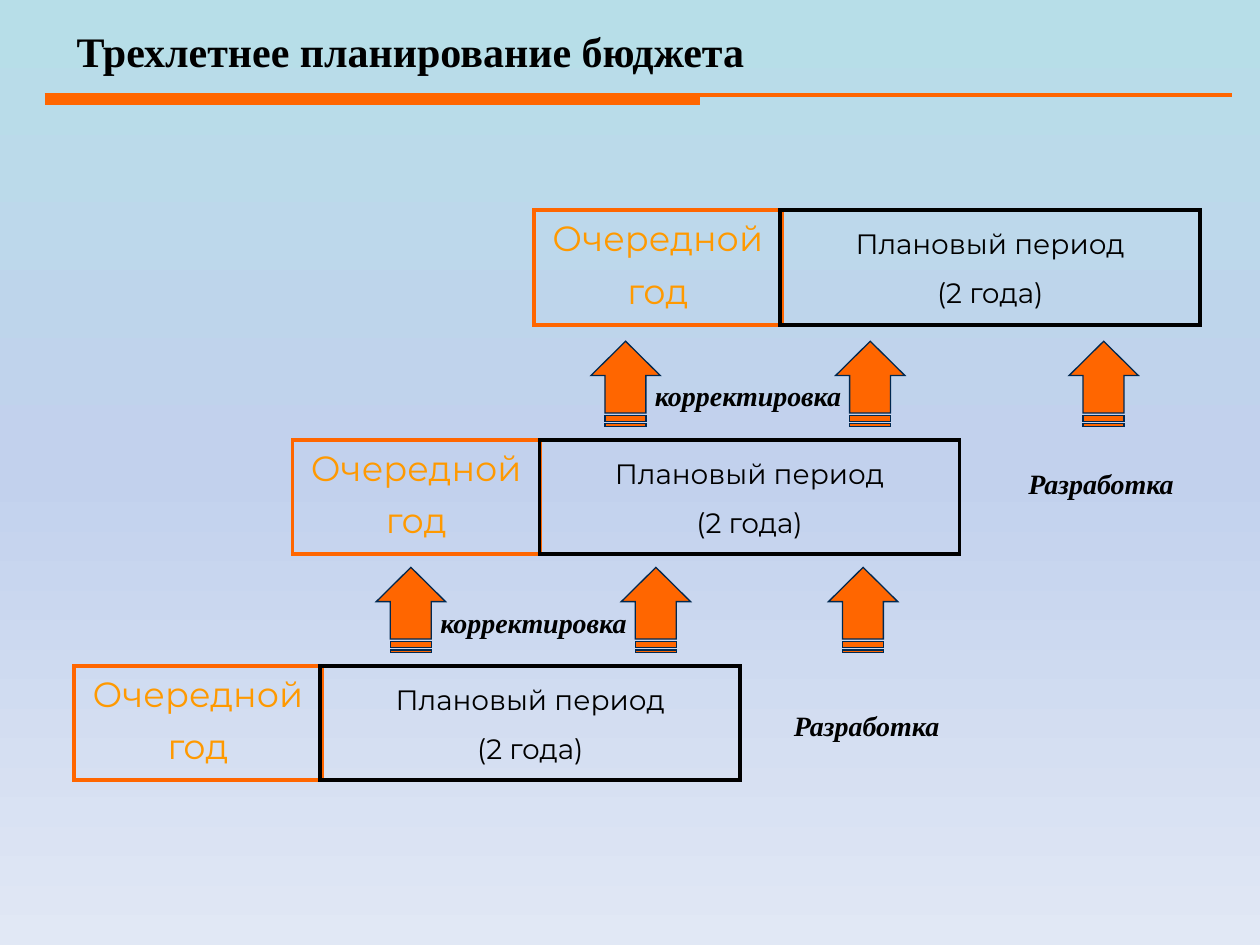
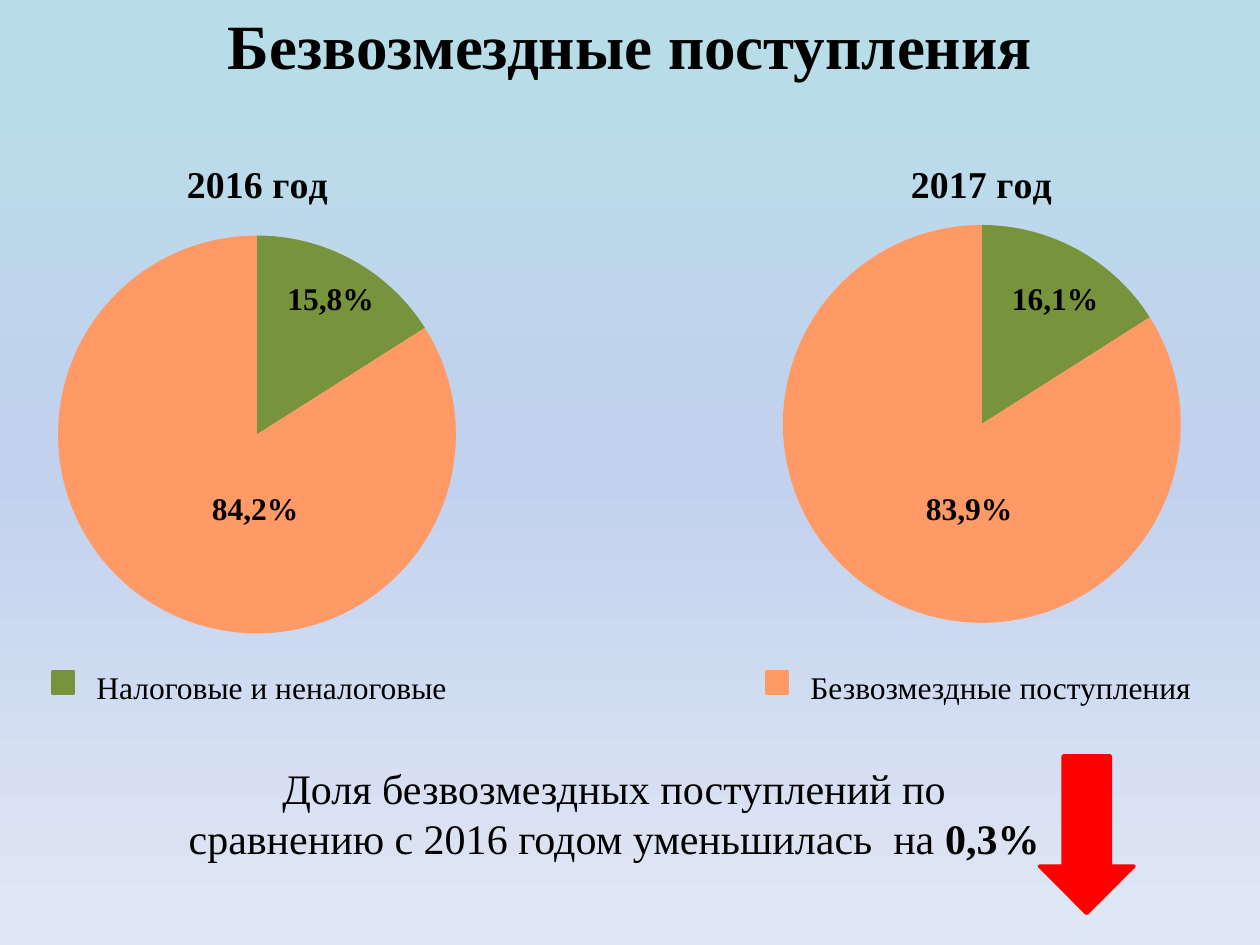
"""Build two budget slides: three-year planning and gratuitous receipts."""
from copy import deepcopy
from dataclasses import dataclass, field

from lxml import etree
from pptx import Presentation
from pptx.chart.data import CategoryChartData
from pptx.dml.color import RGBColor
from pptx.enum.chart import XL_CHART_TYPE
from pptx.enum.shapes import MSO_CONNECTOR, MSO_SHAPE
from pptx.enum.text import MSO_ANCHOR, PP_ALIGN
from pptx.oxml.ns import qn
from pptx.util import Pt

RECT, DOWN_ARROW = MSO_SHAPE.RECTANGLE, MSO_SHAPE.DOWN_ARROW
STRAIGHT, PIE = MSO_CONNECTOR.STRAIGHT, XL_CHART_TYPE.PIE
LEFT, CENTER = PP_ALIGN.LEFT, PP_ALIGN.CENTER
TOP, MIDDLE = MSO_ANCHOR.TOP, MSO_ANCHOR.MIDDLE

BLACK = RGBColor(0x00, 0x00, 0x00)
ORANGE = RGBColor(0xFF, 0x66, 0x00)
AMBER = RGBColor(0xFF, 0x99, 0x00)
NAVY = RGBColor(0x00, 0x28, 0x50)
GREEN = RGBColor(0x77, 0x93, 0x3C)
SALMON = RGBColor(0xFF, 0x99, 0x66)
RED = RGBColor(0xFF, 0x00, 0x00)
SKY = ((0, RGBColor(0xB7, 0xDE, 0xE8)), (0.5, RGBColor(0xC2, 0xD1, 0xED)),
       (1, RGBColor(0xE1, 0xE8, 0xF5)))

SERIF, SANS = "Times New Roman", "Montserrat"
PLAIN = {"name": SERIF, "size": Pt(18)}
BOLD = PLAIN | {"bold": True}
NOTE = {"name": SERIF, "size": Pt(16), "bold": True, "italic": True}
TITLE = BOLD | {"size": Pt(24)}
BIG_TITLE = BOLD | {"size": Pt(36)}
SUMMARY = PLAIN | {"size": Pt(24)}
CHART_TITLE = BOLD | {"size": Pt(21.6)}
NEXT_YEAR = {"name": SANS, "size": Pt(20)}
PLAN_PERIOD = {"name": SANS, "size": Pt(16)}

BOX_H, YEAR_W, PLAN_W = 65.5, 141.5, 240
ARROW_PARTS = (
    ((0, 19.6), (8, 19.6), (8, 41), (31.4, 41), (31.4, 19.6), (39.6, 19.6), (19.8, 0)),
    ((8, 45.7), (31.4, 45.7), (31.4, 42.4), (8, 42.4)),
    ((8, 48.6), (31.4, 48.6), (31.4, 47.2), (8, 47.2)),
)
PIE_SIZE = 227.4


@dataclass(frozen=True)
class Label:
    """A text box: place in points, text, font and alignment."""
    left: float
    top: float
    width: float
    height: float
    text: str
    font: dict = field(default_factory=lambda: BOLD)
    align: PP_ALIGN = CENTER
    anchor: MSO_ANCHOR = TOP
    tail: str = ""


@dataclass(frozen=True)
class Budget:
    """A budget cycle: left edges of its two boxes and their top."""
    year_left: float
    plan_left: float
    top: float


@dataclass(frozen=True)
class ArrowRow:
    """A row of upward arrows that share one top."""
    top: float
    lefts: tuple


@dataclass(frozen=True)
class Pie:
    """A pie chart: its frame, the corner of its circle and its shares."""
    title: str
    left: float
    width: float
    height: float
    circle_left: float
    circle_top: float
    shares: tuple = (16, 84)
    top: float = 77.8


@dataclass(frozen=True)
class Key:
    """A legend entry: colour, text and left edges of marker and text."""
    color: RGBColor
    text: str
    marker_left: float
    text_left: float


BUDGETS = (Budget(42.4, 183, 380.5), Budget(167.2, 308.3, 251.3),
           Budget(305.2, 445.8, 120))
ARROW_ROWS = (ArrowRow(324.2, (215, 355, 473.4)),
              ArrowRow(195, (337.7, 477.5, 610.9)))
PLAN_LABELS = (
    Label(36.7, 15.1, 648, 28.1, "Трехлетнее планирование бюджета", TITLE, LEFT, MIDDLE),
)
NOTES = (
    Label(241.2, 341.5, 127.4, 27.4, "корректировка", NOTE),
    Label(363.8, 212.1, 127.4, 27.4, "корректировка", NOTE),
    Label(569.8, 262.1, 118.8, 27.4, "Разработка", NOTE),
    Label(439.4, 400.3, 111.6, 27.4, "Разработка", NOTE),
)
PIES = (
    Pie("2016 год", 12.2, 270, 293.8, 33.2, 134.6),
    Pie("2017 год", 401.8, 318.2, 288, 447.4, 128.6),
)
KEYS = (Key(GREEN, "Налоговые и неналоговые", 30, 48),
        Key(SALMON, "Безвозмездные поступления", 438, 456))
RECEIPT_LABELS = (
    Label(0, 0, 720, 51, "Безвозмездные поступления", BIG_TITLE),
    Label(96, 432, 509.8, 65.5,
          "Доля безвозмездных поступлений по сравнению с 2016 годом уменьшилась  на ",
          SUMMARY, tail="0,3%"),
    Label(114, 275.8, 77.8, 28.8, "84,2%", align=LEFT),
    Label(522, 275.8, 77.8, 28.8, "83,9%", align=LEFT),
    Label(150, 156.2, 77.8, 28.8, "15,8%"),
    Label(564, 156.2, 77.8, 28.8, "16,1%"),
)


def set_all(target, values: dict) -> None:
    """Set every attribute named in values."""
    for name, value in values.items():
        setattr(target, name, value)


def set_font(font, values: dict, color: RGBColor = BLACK) -> None:
    """Apply font values and a colour."""
    set_all(font, values)
    font.color.rgb = color


def add_run(p, text: str, font: dict, color: RGBColor = BLACK) -> None:
    """Append a formatted run to a paragraph."""
    r = p.add_run()
    r.text = text
    set_font(r.font, font, color)


def spaced(font: dict) -> dict:
    """Return centred paragraph values with half a font size above."""
    return {"alignment": CENTER, "line_spacing": Pt(20),
            "space_before": Pt(font["size"].pt / 2)}


def add_slide(prs):
    """Add a blank slide with the shared sky gradient."""
    s = prs.slides.add_slide(prs.slide_layouts[6])
    fill = s.background.fill
    fill.gradient()
    fill.gradient_angle = 270
    stops = s.element.xpath(".//a:gsLst")[0]
    stops.append(deepcopy(stops[0]))
    for stop, (position, color) in zip(fill.gradient_stops, SKY):
        stop.position = position
        stop.color.rgb = color
    return s


def add_label(s, label: Label, paragraph: dict | None = None) -> None:
    """Draw a text box."""
    sp = s.shapes.add_textbox(Pt(label.left), Pt(label.top), Pt(label.width), Pt(label.height))
    tf = sp.text_frame
    set_all(tf, {"word_wrap": True, "vertical_anchor": label.anchor})
    p = tf.paragraphs[0]
    set_all(p, paragraph or {"alignment": label.align})
    add_run(p, label.text, label.font)
    if label.tail:
        add_run(p, label.tail, label.font | {"bold": True})


def style_shape(sp, fill: RGBColor | None, line: RGBColor, width: float,
                sharp: bool = False) -> None:
    """Give a shape flat fill and line, with sharp corners if asked."""
    sp.shadow.inherit = False
    if fill is None:
        sp.fill.background()
    else:
        sp.fill.solid()
        sp.fill.fore_color.rgb = fill
    sp.line.color.rgb = line
    sp.line.width = Pt(width)
    if sharp:
        ln = sp._element.spPr.find(qn("a:ln"))
        etree.SubElement(ln, qn("a:miter")).set("lim", "800000")


def add_box(s, left: float, top: float, width: float, lines: tuple, font: dict,
            border: RGBColor, color: RGBColor) -> None:
    """Draw an outlined box with centred lines of text."""
    sp = s.shapes.add_shape(RECT, Pt(left), Pt(top), Pt(width), Pt(BOX_H))
    style_shape(sp, None, border, 2.25, sharp=True)
    tf = sp.text_frame
    set_all(tf, {"word_wrap": False, "vertical_anchor": MIDDLE, "margin_left": 0,
                 "margin_right": 0, "margin_top": 0, "margin_bottom": 0})
    for i, line in enumerate(lines):
        p = tf.add_paragraph() if i else tf.paragraphs[0]
        set_all(p, spaced(font))
        add_run(p, line, font, color)


def add_arrow(s, left: float, top: float) -> None:
    """Draw an upward arrow with two bars under it."""
    parts = [[(Pt(x), Pt(y)) for x, y in part] for part in ARROW_PARTS]
    builder = s.shapes.build_freeform(*parts[0][0])
    for i, part in enumerate(parts):
        if i:
            builder.move_to(*part[0])
        builder.add_line_segments(part[1:], close=True)
    sp = builder.convert_to_shape(Pt(left), Pt(top))
    style_shape(sp, ORANGE, NAVY, 0.75, sharp=True)


def add_rule(s, left: float, right: float, y: float, width: float) -> None:
    """Draw a horizontal orange line."""
    line = s.shapes.add_connector(STRAIGHT, Pt(left), Pt(y), Pt(right), Pt(y))
    line.line.color.rgb = ORANGE
    line.line.width = Pt(width)
    etree.SubElement(line._element.spPr, qn("a:effectLst"))


def add_pie(s, pie: Pie) -> None:
    """Draw a pie chart with its circle at a fixed place."""
    data = CategoryChartData()
    data.categories = ["1", "2"]
    data.add_series("Series 1", pie.shares)
    chart = s.shapes.add_chart(PIE, Pt(pie.left), Pt(pie.top), Pt(pie.width),
                               Pt(pie.height), data).chart
    set_font(chart.font, PLAIN)
    chart.has_legend = False
    tf = chart.chart_title.text_frame
    add_run(tf.paragraphs[0], pie.title, CHART_TITLE)
    plot = chart.plots[0]
    plot.vary_by_categories = True
    for i, color in enumerate((GREEN, SALMON)):
        fmt = plot.series[0].points[i].format
        fmt.fill.solid()
        fmt.fill.fore_color.rgb = color
        fmt.line.fill.background()
    area = chart.element.xpath(".//c:plotArea")[0]
    for old in area.findall(qn("c:layout")):
        area.remove(old)
    layout = etree.Element(qn("c:layout"))
    area.insert(0, layout)
    manual = etree.SubElement(layout, qn("c:manualLayout"))
    values = {"layoutTarget": "inner", "xMode": "edge", "yMode": "edge",
              "x": (pie.circle_left - pie.left) / pie.width,
              "y": (pie.circle_top - pie.top) / pie.height,
              "w": PIE_SIZE / pie.width, "h": PIE_SIZE / pie.height}
    for name, value in values.items():
        etree.SubElement(manual, qn(f"c:{name}")).set("val", str(value))


def build_planning(prs) -> None:
    """Build the three-year planning slide."""
    s = add_slide(prs)
    add_rule(s, 25.9, 400.3, 56.9, 6)
    add_rule(s, 25.5, 703.8, 54.5, 2.25)
    for label in PLAN_LABELS:
        add_label(s, label)
    for budget in BUDGETS:
        add_box(s, budget.year_left, budget.top, YEAR_W, ("Очередной", "год"),
                NEXT_YEAR, ORANGE, AMBER)
        add_box(s, budget.plan_left, budget.top, PLAN_W,
                ("Плановый период", "(2 года)"), PLAN_PERIOD, BLACK, BLACK)
    for row in ARROW_ROWS:
        for left in row.lefts:
            add_arrow(s, left, row.top)
    for note in NOTES:
        add_label(s, note, spaced(NOTE))


def build_receipts(prs) -> None:
    """Build the slide that compares the receipts of two years."""
    s = add_slide(prs)
    for pie in PIES:
        add_pie(s, pie)
    for key in KEYS:
        sp = s.shapes.add_shape(RECT, Pt(key.marker_left), Pt(384), Pt(12), Pt(12))
        style_shape(sp, key.color, key.color, 2)
        add_label(s, Label(key.text_left, 378, 246.2, 28.8, key.text, PLAIN, LEFT))
    sp = s.shapes.add_shape(DOWN_ARROW, Pt(594), Pt(432), Pt(54), Pt(90))
    style_shape(sp, RED, RED, 2)
    for label in RECEIPT_LABELS:
        add_label(s, label)


def main() -> None:
    """Build and save the presentation."""
    prs = Presentation()
    set_all(prs, {"slide_width": Pt(720), "slide_height": Pt(540)})
    build_planning(prs)
    build_receipts(prs)
    prs.save("out.pptx")


if __name__ == "__main__":
    main()
